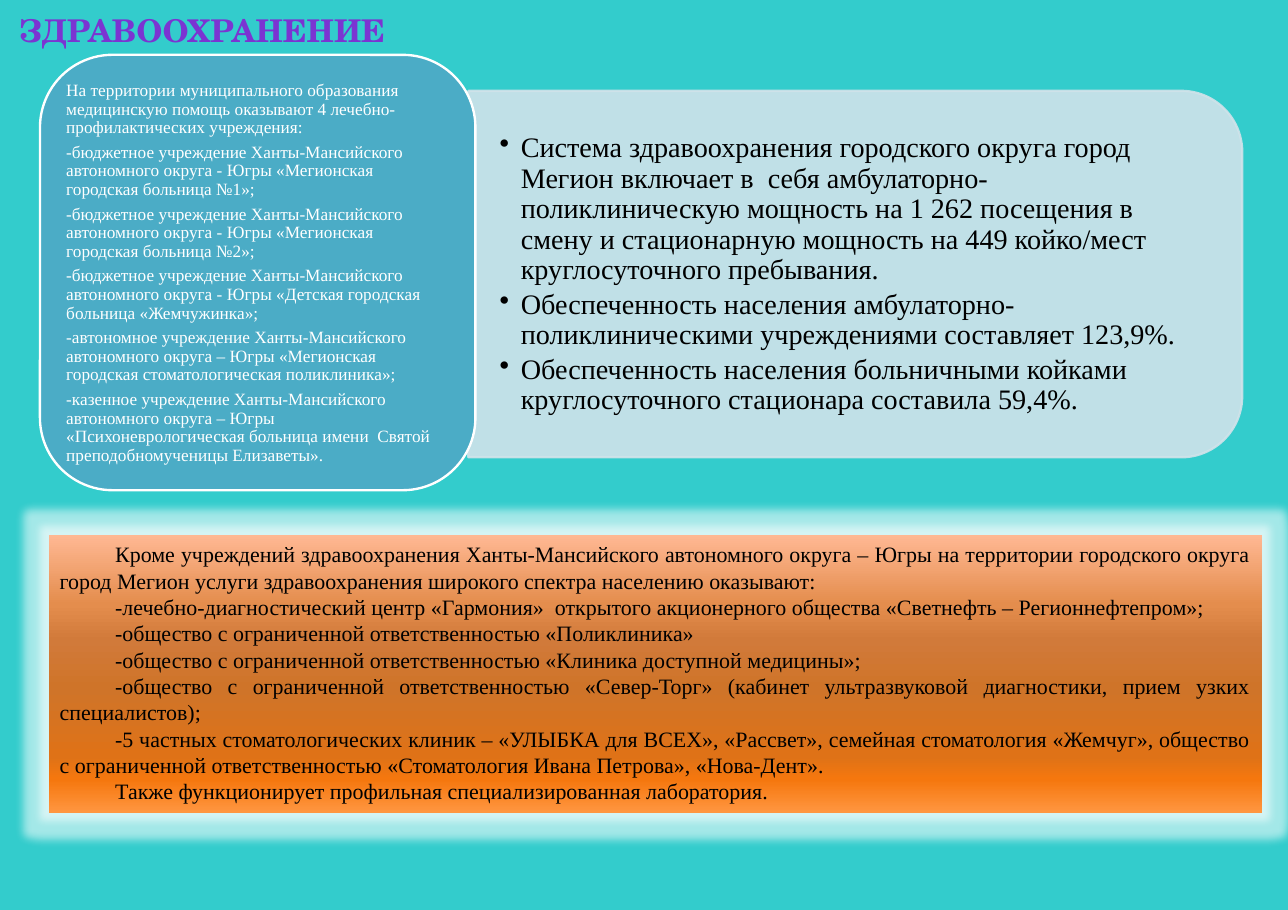
from dataclasses import dataclass

from lxml.etree import SubElement
from pptx import Presentation
from pptx.dml.color import RGBColor as RGB
from pptx.enum.shapes import MSO_SHAPE as SHAPE
from pptx.enum.text import MSO_ANCHOR as ANCHOR, PP_ALIGN as ALIGN
from pptx.oxml.ns import qn
from pptx.util import Pt


@dataclass(frozen=True)
class Theme:
    background: str = "33CCCC"
    title: str = "7B34D2"
    panel: str = "D0E3EA"
    card: str = "4BACC6"
    light: str = "FFFFFF"
    dark: str = "000000"
    orange: tuple = ((0, "FFB893"), (25, "E48D4D"), (38, "D17A3A"), (55, "CF7429"),
                     (80, "DF7217"), (88, "F5770E"), (100, "FF9640"))
    title_font: str = "TeX Gyre Schola"
    body_font: str = "Times New Roman"
    title_size: int = 20
    bullet_size: int = 18
    private_size: int = 14
    card_size: int = 11


THEME = Theme()

TITLE = "ЗДРАВООХРАНЕНИЕ"
BUDGET = "-бюджетное учреждение Ханты-Мансийского автономного округа - Югры "
INSTITUTIONS = [
    "На территории муниципального образования медицинскую помощь оказывают "
    "4 лечебно-профилактических учреждения:",
    BUDGET + "«Мегионская городская больница №1»;",
    BUDGET + "«Мегионская городская больница №2»;",
    BUDGET + "«Детская городская больница «Жемчужинка»;",
    "-автономное учреждение Ханты-Мансийского автономного округа – Югры "
    "«Мегионская городская стоматологическая поликлиника»;",
    "-казенное учреждение Ханты-Мансийского автономного округа – Югры "
    "«Психоневрологическая больница имени  Святой преподобномученицы Елизаветы».",
]
CAPACITY = [
    "Система здравоохранения городского округа город Мегион включает в  себя "
    "амбулаторно-поликлиническую мощность на 1 262 посещения в смену и стационарную "
    "мощность на 449 койко/мест круглосуточного пребывания.",
    "Обеспеченность населения амбулаторно-поликлиническими учреждениями составляет 123,9%.",
    "Обеспеченность населения больничными койками круглосуточного стационара составила 59,4%.",
]
LIMITED = "-общество с ограниченной ответственностью "
PRIVATE = [
    "Кроме учреждений здравоохранения Ханты-Мансийского автономного округа – Югры "
    "на территории городского округа город Мегион услуги здравоохранения "
    "широкого спектра населению оказывают:",
    "-лечебно-диагностический центр «Гармония»  открытого акционерного общества "
    "«Светнефть – Регионнефтепром»;",
    LIMITED + "«Поликлиника»",
    LIMITED + "«Клиника доступной медицины»;",
    LIMITED + "«Север-Торг» (кабинет ультразвуковой диагностики, прием узких специалистов);",
    "-5 частных стоматологических клиник – «УЛЫБКА для ВСЕХ», «Рассвет», семейная "
    "стоматология «Жемчуг», общество с ограниченной ответственностью "
    "«Стоматология Ивана Петрова», «Нова-Дент».",
    "Также функционирует профильная специализированная лаборатория.",
]


def add_panel(s, kind, box, fill, line=None, opacity=100):
    sp = s.shapes.add_shape(kind, *map(Pt, box))
    sp.shadow.inherit = False
    sp.fill.solid()
    sp.fill.fore_color.rgb = RGB.from_string(fill)
    if line:
        sp.line.color.rgb = RGB.from_string(line)
        sp.line.width = Pt(1.5)
    else:
        sp.line.fill.background()
    if opacity < 100:
        for color in sp._element.spPr.iter(qn("a:srgbClr")):
            SubElement(color, qn("a:alpha"), val=str(opacity * 1000))
    return sp


def add_gradient(sp, stops):
    """Fill from top to bottom with (percent, colour) stops."""
    sp.fill.gradient()
    sp.fill.gradient_angle = 270
    stop_list = sp._element.spPr.find(qn("a:gradFill")).find(qn("a:gsLst"))
    for stop in list(stop_list):
        stop_list.remove(stop)
    for percent, color in stops:
        stop = SubElement(stop_list, qn("a:gs"), pos=str(percent * 1000))
        SubElement(stop, qn("a:srgbClr"), val=color)


def add_glow(sp, color, radius, opacity):
    effects = sp._element.spPr.find(qn("a:effectLst"))
    glow = SubElement(effects, qn("a:glow"), rad=str(Pt(radius)))
    color = SubElement(glow, qn("a:srgbClr"), val=color)
    SubElement(color, qn("a:alpha"), val=str(opacity * 1000))


def add_text_box(s, box):
    return s.shapes.add_textbox(*map(Pt, box))


def write(sp, texts, size, color, font=THEME.body_font, bold=False, align=ALIGN.LEFT,
          anchor=ANCHOR.TOP, inset=(7.2, 4), spacing=1.0, after=0, margin=0, indent=0,
          bullet=None):
    tf = sp.text_frame
    tf.word_wrap = True
    tf.vertical_anchor = anchor
    tf.margin_left = tf.margin_right = Pt(inset[0])
    tf.margin_top = tf.margin_bottom = Pt(inset[1])
    for i, text in enumerate(texts):
        p = tf.add_paragraph() if i else tf.paragraphs[0]
        p.text = text
        p.alignment = align
        p.line_spacing = spacing
        p.space_after = Pt(after)
        p.font.name = font
        p.font.size = Pt(size)
        p.font.bold = bold
        p.font.color.rgb = RGB.from_string(color)
        pPr = p._p.get_or_add_pPr()
        pPr.set("marL", str(Pt(margin)))
        pPr.set("indent", str(Pt(indent)))
        if bullet:
            bu = pPr.makeelement(qn("a:buChar"), {"char": bullet})
            pPr.find(qn("a:defRPr")).addprevious(bu)


def add_title(s):
    write(add_text_box(s, (5, 3, 384, 32)), [TITLE], THEME.title_size, THEME.title,
          font=THEME.title_font, bold=True)


def add_capacity(s):
    panel = add_panel(s, SHAPE.ROUND_2_SAME_RECTANGLE, (429, -72, 234, 494),
                      THEME.panel, THEME.panel, opacity=90)
    panel.rotation = 90
    write(add_text_box(s, (299.5, 70, 482.5, 211)), CAPACITY, THEME.bullet_size, THEME.dark,
          anchor=ANCHOR.MIDDLE, inset=(19.5, 10), spacing=0.9, after=2.7,
          margin=13.5, indent=-13.5, bullet="•")


def add_institutions(s):
    add_panel(s, SHAPE.ROUNDED_RECTANGLE, (25.5, 35, 278, 278), THEME.card, THEME.light)
    write(add_text_box(s, (39, 49, 250.5, 251)), INSTITUTIONS, THEME.card_size, THEME.light,
          anchor=ANCHOR.MIDDLE, inset=(3.3, 1.6), spacing=0.9, after=3.85)


def add_private_clinics(s):
    sp = add_panel(s, SHAPE.RECTANGLE, (31, 341.5, 774.5, 177.5), THEME.orange[0][1])
    add_gradient(sp, THEME.orange)
    add_glow(sp, THEME.light, radius=11, opacity=55)
    write(sp, PRIVATE, THEME.private_size, THEME.dark, align=ALIGN.JUSTIFY, indent=35.4)


def main():
    prs = Presentation()
    prs.slide_width, prs.slide_height = Pt(822.24), Pt(581.04)
    s = prs.slides.add_slide(prs.slide_layouts[6])
    s.background.fill.solid()
    s.background.fill.fore_color.rgb = RGB.from_string(THEME.background)
    add_title(s)
    add_capacity(s)
    add_institutions(s)
    add_private_clinics(s)
    prs.save("out.pptx")


if __name__ == "__main__":
    main()
